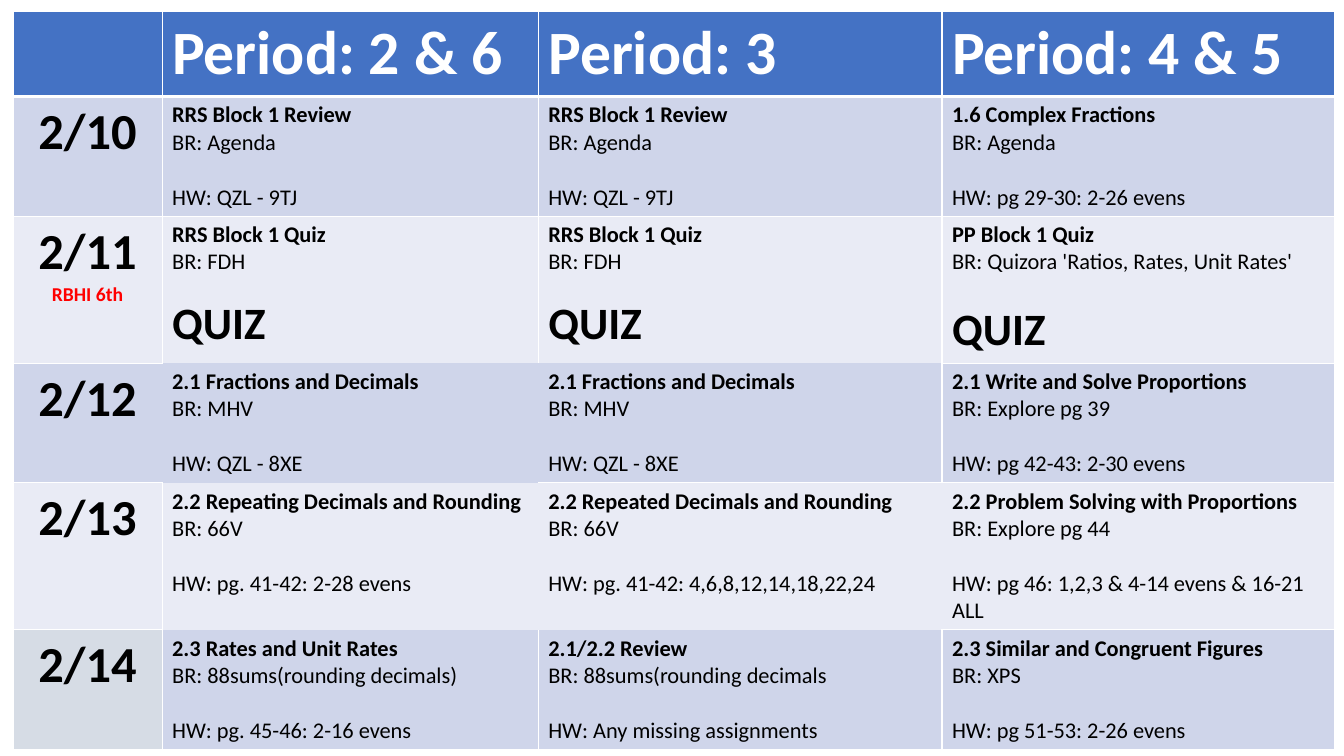
from lxml.etree import SubElement
from pptx import Presentation
from pptx.dml.color import RGBColor
from pptx.enum.text import PP_ALIGN
from pptx.oxml.ns import qn
from pptx.util import Pt

PERIODS = ["Period: 2 & 6", "Period: 3", "Period: 4 & 5"]
# Each day: date, note, then (topic, bell ringer, last line) for every period
DAYS = [
    ("2/10", "", [
        ("RRS Block 1 Review", "BR: Agenda", "HW: QZL - 9TJ"),
        ("RRS Block 1 Review", "BR: Agenda", "HW: QZL - 9TJ"),
        ("1.6 Complex Fractions", "BR: Agenda", "HW: pg 29-30: 2-26 evens")]),
    ("2/11", "RBHI 6th", [
        ("RRS Block 1 Quiz", "BR: FDH", "QUIZ"),
        ("RRS Block 1 Quiz", "BR: FDH", "QUIZ"),
        ("PP Block 1 Quiz", "BR: Quizora 'Ratios, Rates, Unit Rates'", "QUIZ")]),
    ("2/12", "", [
        ("2.1 Fractions and Decimals", "BR: MHV", "HW: QZL - 8XE"),
        ("2.1 Fractions and Decimals", "BR: MHV", "HW: QZL - 8XE"),
        ("2.1 Write and Solve Proportions", "BR: Explore pg 39",
         "HW: pg 42-43: 2-30 evens")]),
    ("2/13", "", [
        ("2.2 Repeating Decimals and Rounding", "BR: 66V", "HW: pg. 41-42: 2-28 evens"),
        ("2.2 Repeated Decimals and Rounding", "BR: 66V",
         "HW: pg. 41-42: 4,6,8,12,14,18,22,24"),
        ("2.2 Problem Solving with Proportions", "BR: Explore pg 44",
         "HW: pg 46: 1,2,3 & 4-14 evens & 16-21 ALL")]),
    ("2/14", "", [
        ("2.3 Rates and Unit Rates", "BR: 88sums(rounding decimals)",
         "HW: pg. 45-46: 2-16 evens"),
        ("2.1/2.2 Review", "BR: 88sums(rounding decimals", "HW: Any missing assignments"),
        ("2.3 Similar and Congruent Figures", "BR: XPS", "HW: pg 51-53: 2-26 evens")]),
]

LEFT, TOP = 9.3, 8
COLUMN_WIDTHS = [106.5, 268.7, 288.4, 280.6]
ROW_HEIGHTS = [52.5, 83.5, 102, 82, 82, 84]
HEADER_FILL, BAND_FILLS, LAST_DATE_FILL = "4472C4", ["E9EBF5", "CFD5EA"], "D6DCE5"
WHITE, BLACK, RED = "FFFFFF", "000000", "FF0000"
LINE_SPACING = 1.22
# Sides without a border line, by (row, column)
OPEN_SIDES = {(2, 1): "B", (2, 2): "B", (3, 0): "R", (3, 1): "LRTB", (3, 2): "LT",
              (4, 0): "R", (4, 1): "RTB", (4, 2): "LRB", (4, 3): "L",
              (5, 1): "T", (5, 2): "T"}

HEADER = {"size": Pt(44), "bold": True}
DATE = {"size": Pt(36), "bold": True}
NOTE = {"size": Pt(14), "bold": True}
TOPIC = {"size": Pt(16), "bold": True}
PLAIN = {"size": Pt(16), "bold": False}
QUIZ = {"size": Pt(32), "bold": True}


def color(value):
    return RGBColor.from_string(value)


def draw_borders(cell, open_sides, bottom_width):
    properties = cell._tc.get_or_add_tcPr()
    for side in "LRTB":
        width = bottom_width if side == "B" else 1
        line = SubElement(properties, qn(f"a:ln{side}"), w=str(Pt(width)))
        if side in open_sides:
            SubElement(line, qn("a:noFill"))
        else:
            fill = SubElement(line, qn("a:solidFill"))
            SubElement(fill, qn("a:srgbClr"), val=WHITE)


def fill_cell(cell, lines, fill, align=PP_ALIGN.LEFT):
    """Write lines of (text, format, colour, space before in points)."""
    cell.fill.solid()
    cell.fill.fore_color.rgb = color(fill)
    frame = cell.text_frame
    for index, (text, look, text_color, gap) in enumerate(lines):
        para = frame.paragraphs[0] if index == 0 else frame.add_paragraph()
        para.alignment = align
        para.space_before = Pt(gap)
        span = para.add_run()
        span.text = text
        span.font.color.rgb = color(text_color)
        for name, value in {"name": "Calibri", **look}.items():
            setattr(span.font, name, value)


def lesson_lines(topic, bell_ringer, last, column):
    is_quiz = last == "QUIZ"
    skipped_size = 12 if is_quiz and column < 3 else 16
    gap = round(skipped_size * LINE_SPACING, 1)
    return [(topic, TOPIC, BLACK, 0), (bell_ringer, PLAIN, BLACK, 0),
            (last, QUIZ if is_quiz else PLAIN, BLACK, gap)]


def main():
    deck = Presentation()
    deck.slide_width, deck.slide_height = Pt(960), Pt(540)
    page = deck.slides.add_slide(deck.slide_layouts[6])
    table = page.shapes.add_table(
        len(ROW_HEIGHTS), len(COLUMN_WIDTHS), Pt(LEFT), Pt(TOP),
        Pt(sum(COLUMN_WIDTHS)), Pt(sum(ROW_HEIGHTS))).table
    for column, width in zip(table.columns, COLUMN_WIDTHS):
        column.width = Pt(width)
    for row, height in zip(table.rows, ROW_HEIGHTS):
        row.height = Pt(height)

    for row in range(len(ROW_HEIGHTS)):
        for column in range(len(COLUMN_WIDTHS)):
            draw_borders(table.cell(row, column), OPEN_SIDES.get((row, column), ""),
                         3 if row == 0 else 1)

    fill_cell(table.cell(0, 0), [], HEADER_FILL)
    for column, period in enumerate(PERIODS, 1):
        fill_cell(table.cell(0, column), [(period, HEADER, WHITE, 0)], HEADER_FILL)
    for row, (date, note, lessons) in enumerate(DAYS, 1):
        band = BAND_FILLS[row % 2]
        date_lines = [(date, DATE, BLACK, 0)]
        if note:
            date_lines.append((note, NOTE, RED, 0))
        date_fill = LAST_DATE_FILL if row == len(DAYS) else band
        fill_cell(table.cell(row, 0), date_lines, date_fill, PP_ALIGN.CENTER)
        for column, lesson in enumerate(lessons, 1):
            fill_cell(table.cell(row, column), lesson_lines(*lesson, column), band)
    deck.save("out.pptx")


if __name__ == "__main__":
    main()
